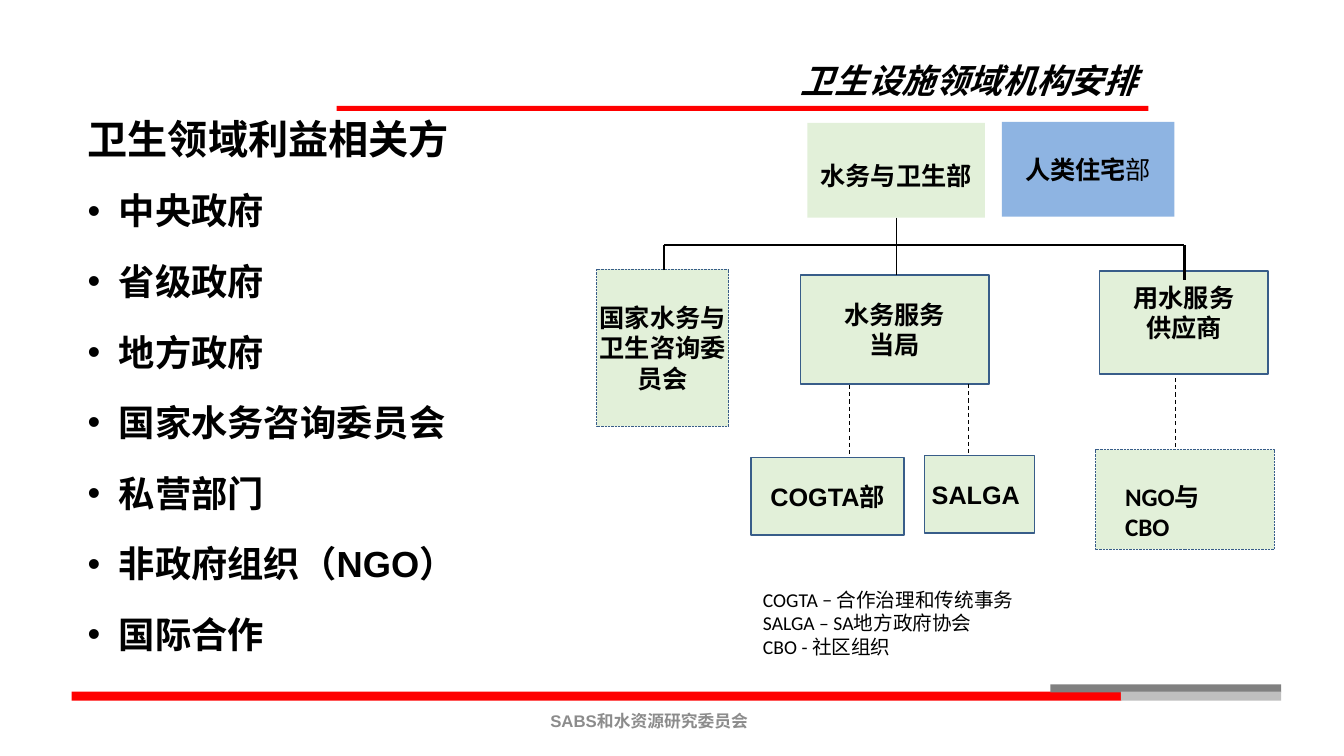
"""Build a slide on sanitation stakeholders and their institutional arrangement."""
from lxml import etree
from pptx import Presentation
from pptx.dml.color import RGBColor
from pptx.enum.dml import MSO_LINE as DASH
from pptx.enum.shapes import MSO_CONNECTOR as CONN, MSO_SHAPE as SHAPE
from pptx.enum.text import MSO_ANCHOR as ANCHOR, PP_ALIGN as ALIGN
from pptx.oxml.ns import qn
from pptx.util import Inches, Pt

BLACK = RGBColor(0x00, 0x00, 0x00)
RED = RGBColor(0xFF, 0x00, 0x00)
GREY = RGBColor(0x80, 0x80, 0x80)
SILVER = RGBColor(0xBF, 0xBF, 0xBF)
FOOTER = RGBColor(0x8C, 0x8C, 0x8C)
GREEN = RGBColor(0xE2, 0xF0, 0xD9)
BLUE = RGBColor(0x8E, 0xB4, 0xE2)
NAVY = RGBColor(0x38, 0x5D, 0x89)

prs = Presentation()
prs.slide_width, prs.slide_height = Inches(13.33), Inches(7.5)
COL, ROW = prs.slide_width / 100, prs.slide_height / 100
s = prs.slides.add_slide(prs.slide_layouts[5])


def grid(left, top, width, height):
    return int(left * COL), int(top * ROW), int(width * COL), int(height * ROW)


def write(p, text, size, font="Arial", bold=True, color=BLACK):
    r = p.add_run()
    r.text = text
    r.font.size, r.font.name, r.font.bold = Pt(size), font, bold
    r.font.color.rgb = color
    return r


bars = [
    (25.05, 14, 60.4, 0.67, RED),
    (5.33, 91.47, 78.1, 1.2, RED),
    (78.15, 90.53, 17.18, 1.07, GREY),
    (83.4, 91.47, 11.93, 1.2, SILVER),
]
for *place, color in bars:
    bar = s.shapes.add_shape(SHAPE.RECTANGLE, *grid(*place))
    bar.shadow.inherit = False
    bar.fill.solid()
    bar.fill.fore_color.rgb = color
    bar.line.fill.background()

title = s.shapes.title
title.left, title.top, title.width, title.height = grid(43.05, 2, 42.3, 12)
tf = title.text_frame
tf.vertical_anchor = ANCHOR.BOTTOM
p = tf.paragraphs[0]
p.alignment, p.line_spacing = ALIGN.RIGHT, 0.9
write(p, "卫生设施领域机构安排", 24).font.italic = True

tf = s.shapes.add_textbox(*grid(31.43, 92.67, 33.75, 5.33)).text_frame
tf.word_wrap, tf.vertical_anchor = True, ANCHOR.MIDDLE
p = tf.paragraphs[0]
p.alignment = ALIGN.CENTER
write(p, "SABS和水资源研究委员会", 12, color=FOOTER)

tf = s.shapes.add_textbox(*grid(5.78, 16.27, 38.18, 73.87)).text_frame
tf.word_wrap = True
p = tf.paragraphs[0]
p.line_spacing = 0.7
write(p, "卫生领域利益相关方", 28.7)
stakeholders = ["中央政府", "省级政府", "地方政府", "国家水务咨询委员会",
                "私营部门", "非政府组织（NGO）", "国际合作"]
for stakeholder in stakeholders:
    p = tf.add_paragraph()
    pPr = p._p.get_or_add_pPr()
    pPr.set("marL", str(Inches(0.31)))
    pPr.set("indent", str(-Inches(0.31)))
    etree.SubElement(pPr, qn("a:buFont")).set("typeface", "Arial")
    etree.SubElement(pPr, qn("a:buChar")).set("char", "•")
    p.line_spacing, p.space_before = 1.3, Pt(10)
    write(p, stakeholder, 25.9)

NONE = (0, 0, 0, 0)
boxes = [
    ((60.08, 16.27, 13.2, 12.53), GREEN, 0, None, (0, 0.1, 0, 0), "Arial", ["水务与卫生部"]),
    ((74.55, 16.13, 12.83, 12.53), BLUE, 0, None, NONE, "Arial", ["人类住宅"]),
    ((44.4, 35.6, 9.83, 20.8), GREEN, 0.5, DASH.ROUND_DOT, NONE, "Calibri", ["国家水务与卫生咨询委员会"]),
    ((59.55, 36.4, 14.03, 14.4), GREEN, 1, None, NONE, "Arial", ["水务服务", "当局"]),
    ((81.83, 35.87, 12.53, 13.6), GREEN, 1, None, (0.25, 0, 0.25, 0.2), "Arial", ["用水服务供应商"]),
    ((55.88, 60.53, 11.4, 10.27), GREEN, 1, None, NONE, "Arial", ["COGTA部"]),
    ((68.78, 60.27, 8.18, 10.27), GREEN, 1, None, (0, 0, 0.07, 0), "Arial", ["SALGA"]),
    ((81.53, 59.47, 13.28, 13.2), GREEN, 0.5, DASH.ROUND_DOT, (0.29, 0.24, 0.45, 0), "Calibri", ["NGO与CBO"]),
]
for place, fill, weight, dash, insets, font, lines in boxes:
    sp = s.shapes.add_shape(SHAPE.RECTANGLE, *grid(*place))
    sp.shadow.inherit = False
    sp.fill.solid()
    sp.fill.fore_color.rgb = fill
    if weight:
        sp.line.color.rgb, sp.line.width = NAVY, Pt(weight)
        sp.line.dash_style = dash
    else:
        sp.line.fill.background()
    tf = sp.text_frame
    tf.word_wrap, tf.vertical_anchor = True, ANCHOR.MIDDLE
    tf.margin_left, tf.margin_top, tf.margin_right, tf.margin_bottom = map(Inches, insets)
    for i, line in enumerate(lines):
        p = tf.add_paragraph() if i else tf.paragraphs[0]
        p.alignment = ALIGN.LEFT if line.startswith("NGO") else ALIGN.CENTER
        write(p, line, 18, font)
        if fill == BLUE:
            write(p, "部", 18, "Calibri", False)

links = [
    (66.68, 28.8, 66.68, 36.4, 0.5, None),
    (49.43, 35.73, 49.43, 32.4, 1.5, None),
    (49.43, 32.4, 88.13, 32.4, 1.5, None),
    (88.13, 32.4, 88.13, 37.07, 1.5, None),
    (63.23, 50.93, 63.23, 60.27, 0.75, DASH.DASH),
    (72.08, 50.8, 72.08, 60, 0.75, DASH.DASH),
    (87.45, 50, 87.45, 59.2, 0.75, DASH.DASH),
]
for *ends, weight, dash in links:
    link = s.shapes.add_connector(CONN.STRAIGHT, *grid(*ends))
    link.line.color.rgb, link.line.width = BLACK, Pt(weight)
    link.line.dash_style = dash
    etree.SubElement(link._element.spPr, qn("a:effectLst"))

tf = s.shapes.add_textbox(*grid(56.03, 77.07, 29.93, 13.87)).text_frame
tf.word_wrap = True
legend = ["COGTA − 合作治理和传统事务", "SALGA – SA地方政府协会", "CBO - 社区组织"]
for i, entry in enumerate(legend):
    p = tf.add_paragraph() if i else tf.paragraphs[0]
    write(p, entry, 14, "Calibri", False)

prs.save("out.pptx")
